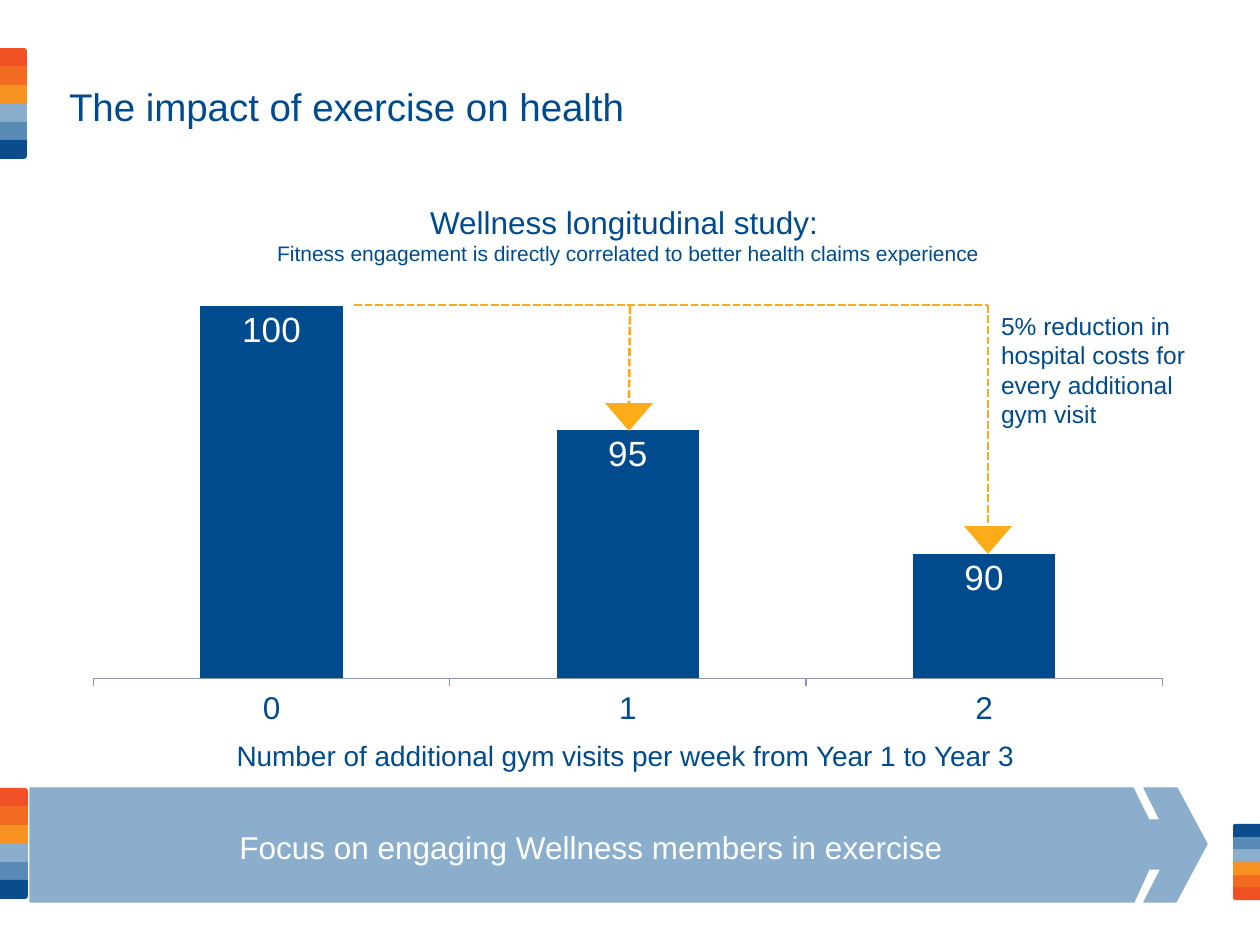
from lxml import etree
from pptx import Presentation
from pptx.chart.data import CategoryChartData
from pptx.dml.color import RGBColor
from pptx.enum.chart import XL_CHART_TYPE as ChartType, XL_LABEL_POSITION as LabelPosition, XL_TICK_MARK as TickMark
from pptx.enum.dml import MSO_LINE as Dash
from pptx.enum.shapes import MSO_CONNECTOR as Connector, MSO_SHAPE as Shape
from pptx.enum.text import MSO_ANCHOR as Anchor, MSO_AUTO_SIZE as AutoSize, PP_ALIGN as Align
from pptx.oxml.ns import qn
from pptx.util import Emu, Pt

NAVY = RGBColor(0x00, 0x4B, 0x8D)
WHITE = RGBColor(0xFF, 0xFF, 0xFF)
AMBER = RGBColor(0xFB, 0xAC, 0x18)
PALE_BLUE = RGBColor(0x8B, 0xAE, 0xCC)
AXIS_GREY = RGBColor(0x8A, 0x93, 0xB0)
STRIPES = [
    RGBColor(0xF1, 0x50, 0x24),
    RGBColor(0xF3, 0x6B, 0x21),
    RGBColor(0xF7, 0x91, 0x22),
    PALE_BLUE,
    RGBColor(0x58, 0x8B, 0xB6),
    RGBColor(0x0B, 0x4C, 0x8C),
]
FONT = "Arial"
EMU_PER_PX = 914400 / 126


def px(length):
    return Emu(round(length * EMU_PER_PX))


def write(paragraph, text, size=18, color=NAVY, align=Align.CENTER):
    paragraph.alignment = align
    run = paragraph.add_run()
    run.text = text
    run.font.name = FONT
    run.font.size = Pt(size)
    run.font.color.rgb = color


class SlideBuilder:
    def __init__(self, presentation):
        self.slide = presentation.slides.add_slide(presentation.slide_layouts[5])
        self.shapes = self.slide.shapes

    def set_insets(self, frame, left, top, right, bottom):
        frame.margin_left, frame.margin_top = px(left), px(top)
        frame.margin_right, frame.margin_bottom = px(right), px(bottom)

    def title(self, text, left, top, width, height):
        title = self.shapes.title
        title.left, title.top, title.width, title.height = map(px, (left, top, width, height))
        frame = title.text_frame
        frame.auto_size = AutoSize.NONE
        frame.vertical_anchor = Anchor.MIDDLE
        self.set_insets(frame, 25, 6, 13, 6)
        write(frame.paragraphs[0], text, size=22, align=Align.LEFT)

    def text(self, lines, left, top, width, height, insets=(13, 6, 13, 6), **style):
        frame = self.shapes.add_textbox(*map(px, (left, top, width, height))).text_frame
        frame.word_wrap = True
        self.set_insets(frame, *insets)
        for index, (line, size) in enumerate(lines):
            paragraph = frame.add_paragraph() if index else frame.paragraphs[0]
            write(paragraph, line, size=size, **style)

    def block(self, kind, left, top, width, height, color, rotation=0):
        shape = self.shapes.add_shape(kind, *map(px, (left, top, width, height)))
        shape.shadow.inherit = False
        shape.fill.solid()
        shape.fill.fore_color.rgb = color
        shape.line.fill.background()
        shape.rotation = rotation
        return shape

    def stripes(self, left, top, width, height, rotation=0):
        step = height / len(STRIPES)
        last = len(STRIPES) - 1
        for index, color in enumerate(STRIPES):
            row = last - index if rotation else index
            start, end = round(top + row * step), round(top + (row + 1) * step)
            stripe = self.block(Shape.ROUND_1_RECTANGLE, left, start, width, end - start, color, rotation)
            if index == last:
                stripe._element.spPr.xfrm.set("flipV", "1")
            elif index:
                stripe.adjustments[0] = 0

    def outline(self, points, color):
        builder = self.shapes.build_freeform(*points[0], scale=EMU_PER_PX)
        builder.add_line_segments(points[1:], close=True)
        shape = builder.convert_to_shape()
        shape.shadow.inherit = False
        shape.fill.solid()
        shape.fill.fore_color.rgb = color
        shape.line.color.rgb = color
        shape.line.width = Pt(0.75)

    def dashed_line(self, *ends):
        line = self.shapes.add_connector(Connector.STRAIGHT, *map(px, ends))
        line.line.color.rgb = AMBER
        line.line.width = Pt(1.5)
        line.line.dash_style = Dash.SQUARE_DOT
        etree.SubElement(line._element.spPr, qn("a:effectLst"))

    def column_chart(self, categories, values, left, top, width, height, plot_area):
        data = CategoryChartData()
        data.categories = categories
        data.add_series("Series 1", values)
        frame = self.shapes.add_chart(ChartType.COLUMN_CLUSTERED, *map(px, (left, top, width, height)), data)
        chart = frame.chart
        chart.has_legend = False
        chart.has_title = False
        chart.font.name = FONT
        chart.font.size = Pt(18)
        chart.font.color.rgb = NAVY

        value_axis = chart.value_axis
        value_axis.minimum_scale, value_axis.maximum_scale = 85, 101
        value_axis.has_major_gridlines = False
        value_axis.visible = False
        category_axis = chart.category_axis
        category_axis.major_tick_mark = TickMark.OUTSIDE
        category_axis.format.line.color.rgb = AXIS_GREY
        category_axis.format.line.width = Pt(0.75)

        plot = chart.plots[0]
        plot.gap_width = 150
        plot.vary_by_categories = False
        fill = plot.series[0].format.fill
        fill.solid()
        fill.fore_color.rgb = NAVY
        labels = plot.series[0].data_labels
        labels.show_value = True
        labels.position = LabelPosition.INSIDE_END
        labels.font.name = FONT
        labels.font.size = Pt(20)
        labels.font.color.rgb = WHITE
        self.place_plot(chart, plot_area)

    def place_plot(self, chart, plot_area):
        area = chart._chartSpace.chart.plotArea
        for old in area.findall(qn("c:layout")):
            area.remove(old)
        layout = etree.Element(qn("c:layout"))
        area.insert(0, layout)
        manual = etree.SubElement(layout, qn("c:manualLayout"))
        settings = [("layoutTarget", "inner"), ("xMode", "edge"), ("yMode", "edge")]
        for name, value in settings + list(zip("xywh", plot_area)):
            etree.SubElement(manual, qn(f"c:{name}")).set("val", str(value))


def main():
    presentation = Presentation()
    presentation.slide_width, presentation.slide_height = px(1260), px(945)
    builder = SlideBuilder(presentation)

    builder.stripes(-1, 48, 28, 111)
    builder.stripes(1233, 824, 27, 76, rotation=180)
    builder.stripes(0, 788, 28, 111)
    builder.outline(
        [(30, 788), (1133, 788), (1149, 820), (1160, 820), (1144, 788), (1177, 788), (1207, 844),
         (1176, 902), (1144, 902), (1161, 869), (1149, 869), (1134, 902), (30, 902)],
        PALE_BLUE,
    )
    builder.title("The impact of exercise on health", 44, 48, 924, 116)
    builder.column_chart(["0", "1", "2"], [100, 95, 90], 47, 207, 1162, 575, (0.04, 0.13, 0.92, 0.69))

    builder.text([("Number of additional gym visits per week from Year 1 to Year 3", 16)], 116, 733, 1019, 47)
    builder.text([("5% reduction in hospital costs for every additional gym visit", 14)],
                 988, 305, 234, 131, align=Align.LEFT)
    builder.text(
        [("Wellness longitudinal study: ", 18),
         ("Fitness engagement is directly correlated to better health claims experience", 12)],
        151, 197, 955, 77,
    )
    builder.text([("Focus on engaging Wellness members in exercise", 18)],
                 33, 815, 1116, 63, insets=(25, 13, 25, 13), color=WHITE)

    builder.dashed_line(354, 305, 988, 305)
    builder.dashed_line(988, 305, 988, 523)
    builder.dashed_line(630, 306, 629, 403)
    for left, top in [(605, 403), (964, 526)]:
        builder.block(Shape.ISOSCELES_TRIANGLE, left, top, 48, 28, AMBER, rotation=180)

    presentation.save("out.pptx")


if __name__ == "__main__":
    main()
